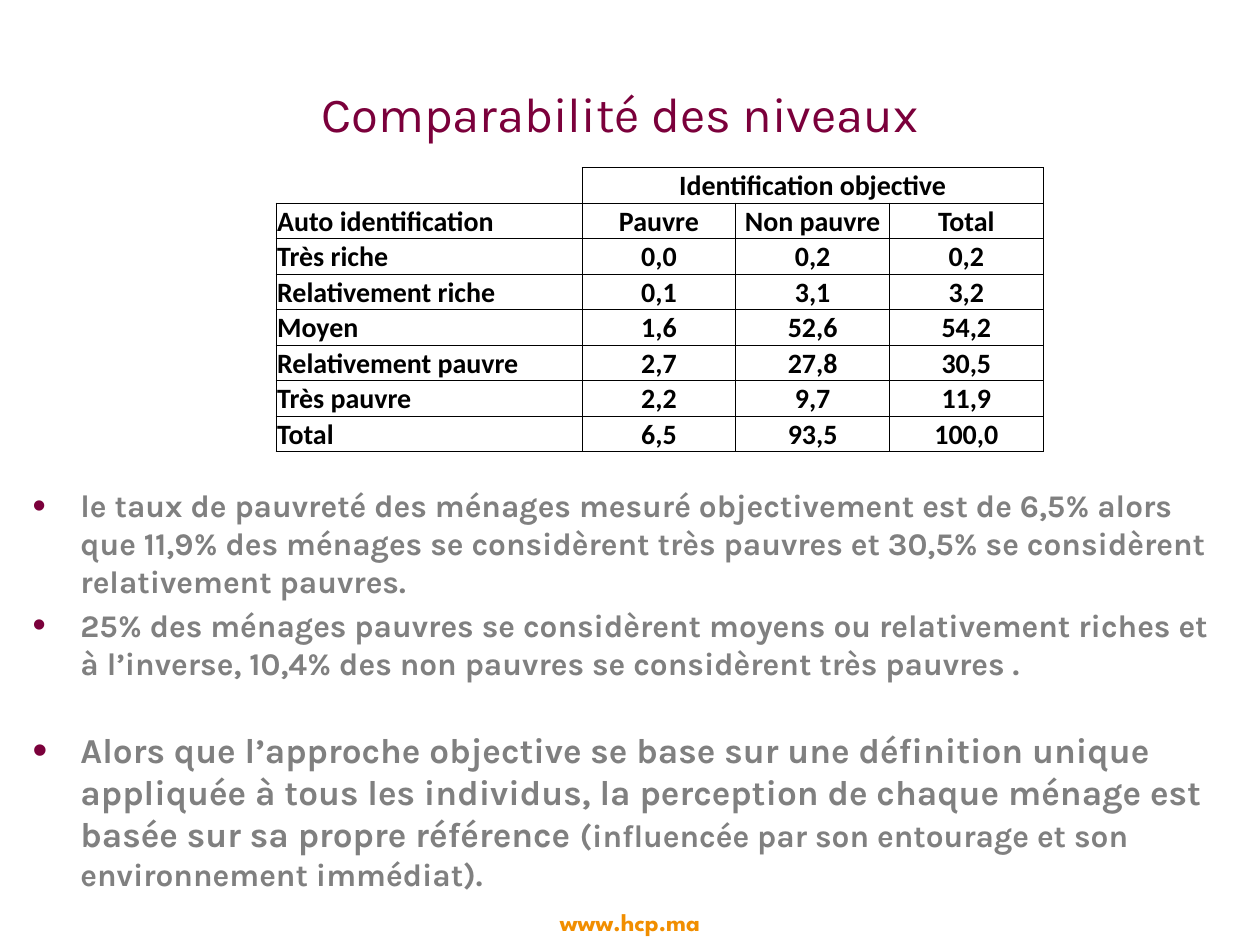
from lxml import etree
from pptx import Presentation
from pptx.dml.color import RGBColor
from pptx.enum.text import MSO_ANCHOR, PP_ALIGN
from pptx.oxml.ns import qn
from pptx.util import Inches, Pt

LEFT, CENTER = PP_ALIGN.LEFT, PP_ALIGN.CENTER
TOP, MIDDLE = MSO_ANCHOR.TOP, MSO_ANCHOR.MIDDLE
PLUM, GREY, ORANGE, BLACK = "7B003B", "808080", "F18E00", "000000"

TITLE = "Comparabilité des niveaux"
SITE = "www.hcp.ma"
ROWS = [
    ("", "Identification objective", "", ""),
    ("Auto identification", "Pauvre", "Non pauvre", "Total"),
    ("Très riche", "0,0", "0,2", "0,2"),
    ("Relativement riche", "0,1", "3,1", "3,2"),
    ("Moyen", "1,6", "52,6", "54,2"),
    ("Relativement pauvre", "2,7", "27,8", "30,5"),
    ("Très pauvre", "2,2", "9,7", "11,9"),
    ("Total", "6,5", "93,5", "100,0"),
]
WIDTHS = (2.43, 1.22, 1.22, 1.22)
ROW_H = 0.28
# space before in points, then runs of (text, size)
POINTS = [
    (0, [("le taux de pauvreté des ménages mesuré objectivement est de 6,5% "
          "alors que 11,9% des ménages se considèrent très pauvres et 30,5% "
          "se considèrent relativement pauvres.", 18)]),
    (3.6, [("25% des ménages pauvres se considèrent moyens ou relativement "
            "riches et à l’inverse, 10,4% des non pauvres se considèrent "
            "très pauvres .", 18)]),
    (27, [("Alors que l’approche objective se base sur une définition unique "
           "appliquée à tous les individus, la perception de chaque ménage "
           "est basée sur sa propre référence ", 20),
          ("(influencée par son entourage et son environnement immédiat).",
           18)]),
]


def style(font, color, **values):
    font.color.rgb = RGBColor.from_string(color)
    for name, value in values.items():
        setattr(font, name, value)


def place(shape, left, top, width, height, anchor):
    shape.left, shape.top = Inches(left), Inches(top)
    shape.width, shape.height = Inches(width), Inches(height)
    shape.text_frame.word_wrap = True
    shape.text_frame.vertical_anchor = anchor
    return shape.text_frame


def add_text(par, text, color, align=LEFT, **values):
    par.alignment = align
    run = par.add_run()
    run.text = text
    style(run.font, color, **values)


def add_bullet(par):
    props = par._p.get_or_add_pPr()
    props.set("marL", str(Inches(0.38)))
    props.set("indent", str(-Inches(0.38)))
    color = etree.SubElement(props, qn("a:buClr"))
    etree.SubElement(color, qn("a:srgbClr"), val=PLUM)
    etree.SubElement(props, qn("a:buSzPct"), val="120000")
    etree.SubElement(props, qn("a:buFont"), typeface="Arial")
    etree.SubElement(props, qn("a:buChar"), char="•")


def add_border(cell, bare):
    """Rule all four sides in black, leaving out those named in bare."""
    props = cell._tc.get_or_add_tcPr()
    for side in "LRTB":
        line = etree.SubElement(props, qn("a:ln" + side), w=str(Pt(0.5)))
        if side in bare:
            etree.SubElement(line, qn("a:noFill"))
        else:
            fill = etree.SubElement(line, qn("a:solidFill"))
            etree.SubElement(fill, qn("a:srgbClr"), val=BLACK)


def fill_cell(cell, text, align, bare):
    add_border(cell, bare)
    cell.fill.background()
    cell.vertical_anchor = MIDDLE
    cell.margin_left = cell.margin_right = cell.margin_top = Inches(0.01)
    cell.margin_bottom = 0
    par = cell.text_frame.paragraphs[0]
    look = dict(size=Pt(16), name="Calibri", bold=True)
    if text:
        add_text(par, text, BLACK, align, **look)
    else:
        style(par.font, BLACK, **look)


def add_grid(shapes):
    frame = shapes.add_table(len(ROWS), len(WIDTHS), Inches(2.19), Inches(1.33),
                             Inches(sum(WIDTHS)), Inches(ROW_H * len(ROWS)))
    table = frame.table
    table.first_row = table.horz_banding = False
    for col, width in zip(table.columns, WIDTHS):
        col.width = Inches(width)
    for r, row in enumerate(ROWS):
        table.rows[r].height = Inches(ROW_H)
        for c, text in enumerate(row):
            fill_cell(table.cell(r, c), text, CENTER if c else LEFT,
                      "" if r or c else "LT")
    table.cell(0, 1).merge(table.cell(0, 3))


def main():
    prs = Presentation()
    prs.slide_width, prs.slide_height = Inches(10), Inches(7.5)
    slide = prs.slides.add_slide(prs.slide_layouts[5])
    shapes = slide.shapes

    title = place(shapes.title, 0.31, 0.62, 9.22, 0.55, MIDDLE)
    add_text(title.paragraphs[0], TITLE, PLUM, CENTER, size=Pt(28), name="Karla")

    add_grid(shapes)

    body = place(shapes.add_textbox(0, 0, 0, 0), 0.16, 3.81, 9.69, 3.22, TOP)
    for i, (gap, runs) in enumerate(POINTS):
        par = body.add_paragraph() if i else body.paragraphs[0]
        add_bullet(par)
        par.space_before = Pt(gap)
        for text, size in runs:
            add_text(par, text, GREY, size=Pt(size), name="Karla", bold=True)

    foot = place(shapes.add_textbox(0, 0, 0, 0), 3.82, 7.15, 2.36, 0.33, MIDDLE)
    add_text(foot.paragraphs[0], SITE, ORANGE, CENTER, size=Pt(14),
             name="League Spartan", bold=True)
    prs.save("out.pptx")


if __name__ == "__main__":
    main()
